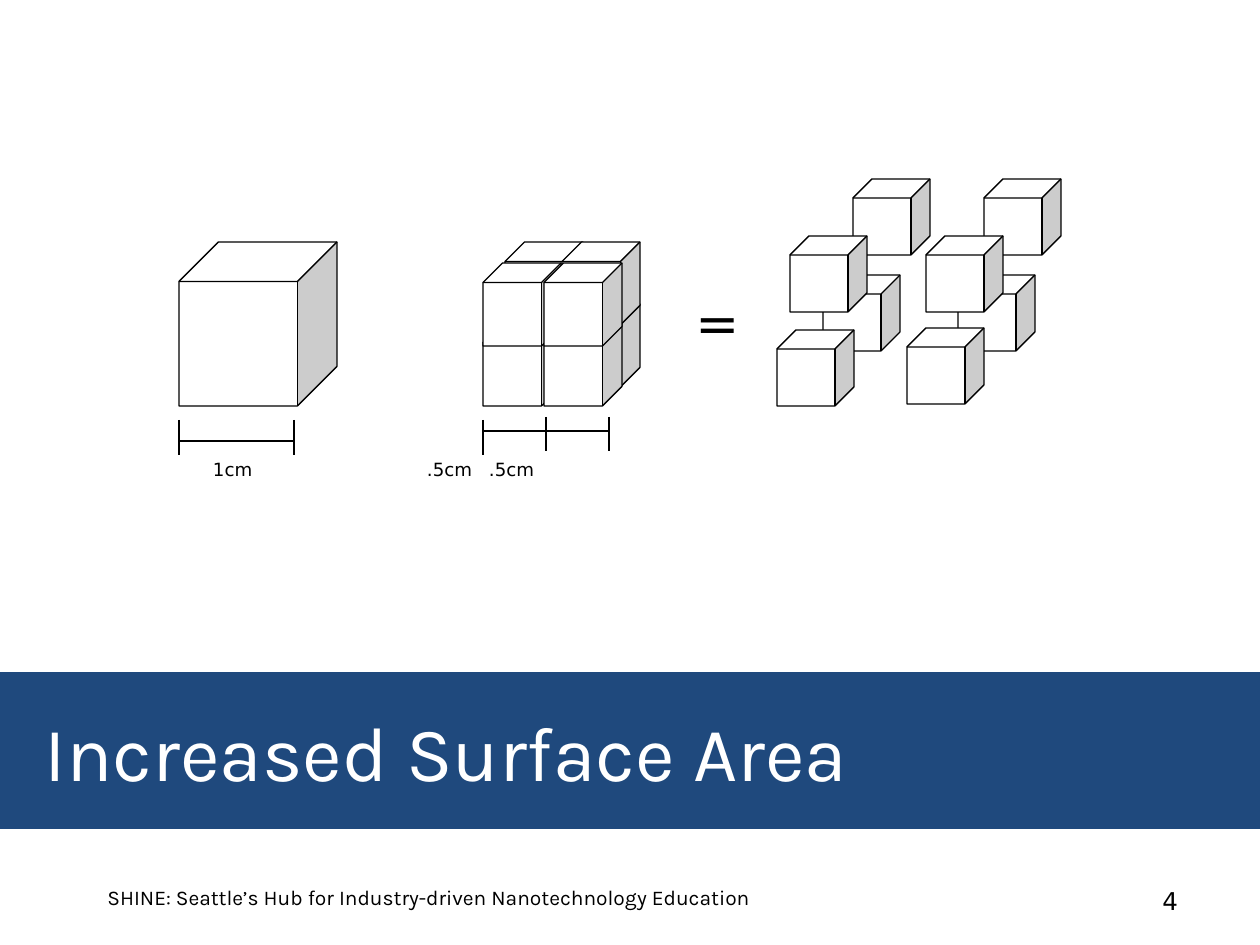
import lxml.etree
import pptx
import pptx.dml.color
import pptx.enum.shapes
import pptx.enum.text
import pptx.oxml.ns
import pptx.util

SCALE = 914400 / 126
COLORS = {"band": "1F497D", "paper": "FFFFFF", "ink": "000000"}
rgb = pptx.dml.color.RGBColor.from_string
qn = pptx.oxml.ns.qn
ANCHOR = pptx.enum.text.MSO_ANCHOR
FIT = pptx.enum.text.MSO_AUTO_SIZE


def emu(*lengths):
    return [round(length * SCALE) for length in lengths]


def write(box, text, size, font, color):
    """Add one formatted run to the box's first paragraph."""
    box.text_frame.word_wrap = True
    span = box.text_frame.paragraphs[0].add_run()
    span.text = text
    span.font.size = pptx.util.Pt(size)
    span.font.name = font
    span.font.color.rgb = rgb(COLORS[color])


deck = pptx.Presentation()
deck.slide_width, deck.slide_height = emu(1260, 945)
page = deck.slides.add_slide(deck.slide_layouts[5])

# Title band
title = page.shapes.title
title.left, title.top, title.width, title.height = emu(0, 672, 1260, 157)
title.fill.solid()
title.fill.fore_color.rgb = rgb(COLORS["band"])
title.text_frame.auto_size = FIT.NONE
title.text_frame.vertical_anchor = ANCHOR.MIDDLE
title.text_frame.margin_left = emu(45)[0]
title.text_frame.paragraphs[0].alignment = pptx.enum.text.PP_ALIGN.LEFT
write(title, "Increased Surface Area", 44, "Karla", "paper")

# Cubes: whole, cut into eight, and pulled apart; each list runs back to front
cube_sets = [
    (158, 164, [(179, 242)]),
    (78, 83, [(483, 323), (562, 304), (544, 323), (505, 242),
              (562, 242), (483, 263), (544, 263)]),
    (77, 76, [(958, 275), (823, 275), (907, 328), (777, 330),
              (984, 179), (853, 179), (926, 236), (790, 236)]),
]
for width, height, corners in cube_sets:
    holder = page.shapes if len(corners) == 1 else page.shapes.add_group_shape().shapes
    for left, top in corners:
        cube = holder.add_shape(pptx.enum.shapes.MSO_SHAPE.CUBE, *emu(left, top, width, height))
        cube.adjustments[0] = 0.25
        cube.shadow.inherit = False
        cube.fill.solid()
        cube.fill.fore_color.rgb = rgb(COLORS["paper"])
        cube.line.color.rgb = rgb(COLORS["ink"])
        cube.line.width = pptx.util.Pt(0.75)

# Edge lengths
labels = page.shapes.add_textbox(*emu(189, 431, 451, 50))
labels.text_frame.margin_left = emu(24)[0]
labels.text_frame.auto_size = FIT.SHAPE_TO_FIT_TEXT
label_para = next(labels.element.iter(qn("a:p")))
tab_list = lxml.etree.SubElement(label_para.get_or_add_pPr(), qn("a:tabLst"))
for stop in emu(214, 276):
    lxml.etree.SubElement(tab_list, qn("a:tab"), pos=str(stop), algn="l")
write(labels, "1cm\t.5cm\t.5cm", 18, "DejaVu Sans", "ink")
for properties in labels.element.iter(qn("a:rPr")):
    properties.set("baseline", "-25000")

# Dimension rules and their ticks
rules = [(179, 441, 294, 441), (483, 431, 609, 431)]
ticks = [(x, 420, x, 455) for x in (179, 294, 483)]
ticks += [(x, 417, x, 451) for x in (546, 609)]
for ends in rules + ticks:
    line = page.shapes.add_connector(pptx.enum.shapes.MSO_CONNECTOR.STRAIGHT, *emu(*ends))
    line.line.color.rgb = rgb(COLORS["ink"])
    line.line.width = pptx.util.Pt(0.75)
    lxml.etree.SubElement(line.element.spPr, qn("a:effectLst"))

equals = page.shapes.add_textbox(*emu(683, 284, 168, 77))
equals.text_frame.auto_size = FIT.SHAPE_TO_FIT_TEXT
write(equals, "=", 30, "DejaVu Sans", "ink")

# Footer
footer = page.shapes.add_textbox(*emu(95, 872, 672, 50))
footer.text_frame.vertical_anchor = ANCHOR.MIDDLE
write(footer, "SHINE: Seattle’s Hub for Industry-driven Nanotechnology Education", 12, "Karla", "ink")

number = page.shapes.add_textbox(*emu(1150, 873, 63, 50))
number.text_frame.margin_top = emu(13)[0]
write(number, "4", 14, "DejaVu Sans", "ink")

deck.save("out.pptx")
